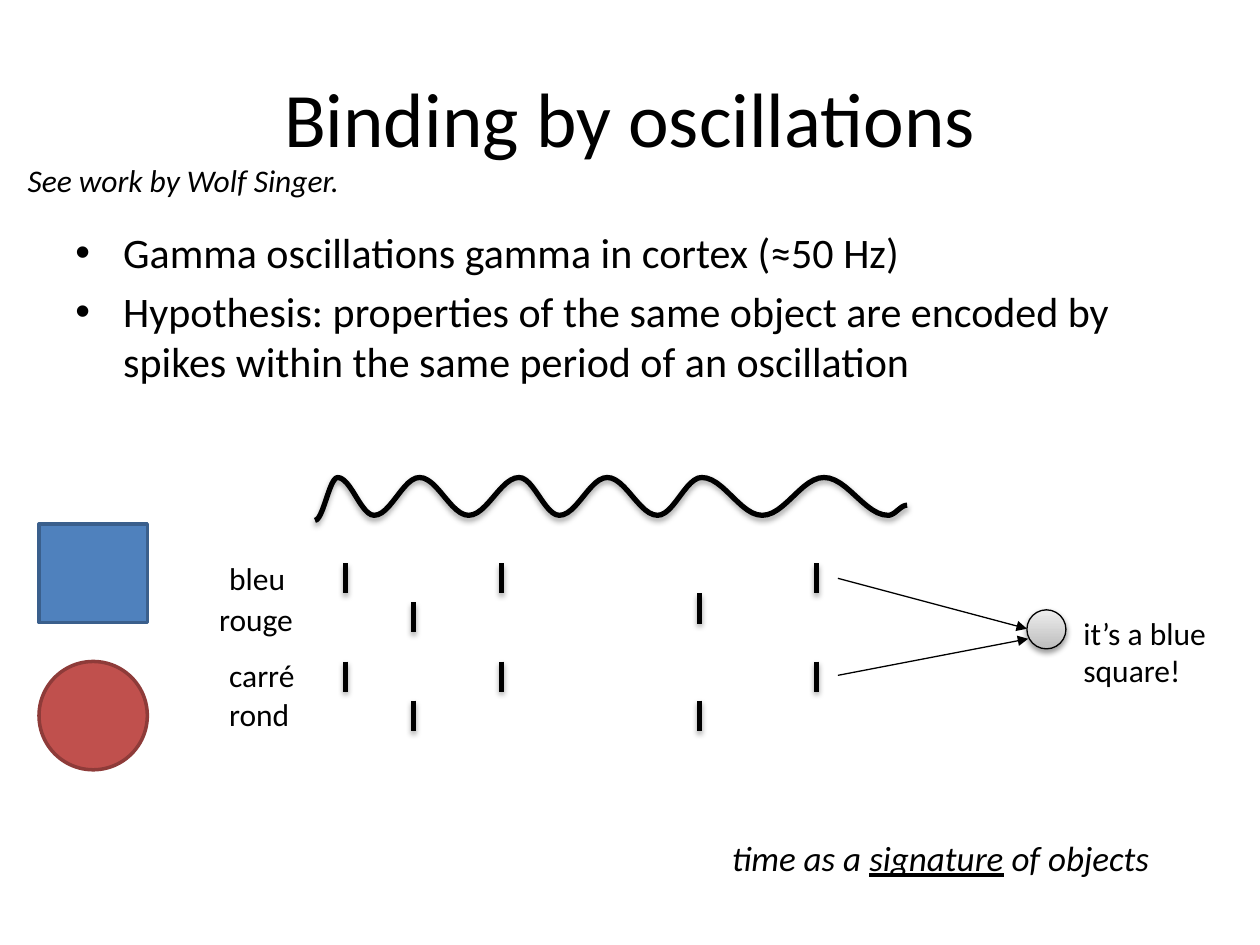
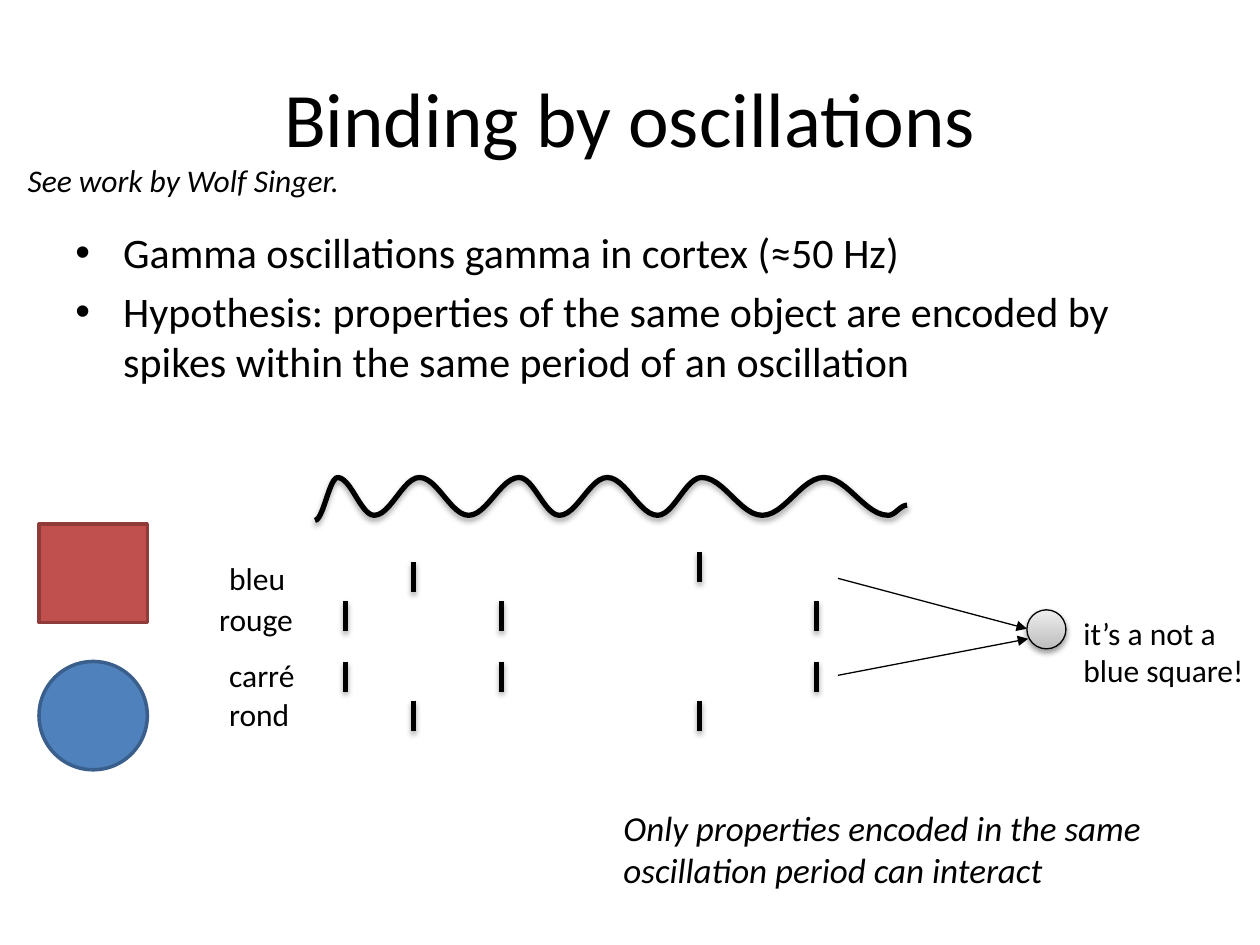
from itertools import pairwise
from math import cos, pi
from lxml.etree import SubElement
from pptx import Presentation
from pptx.dml.color import RGBColor
from pptx.enum.shapes import MSO_CONNECTOR, MSO_SHAPE
from pptx.enum.text import MSO_ANCHOR, PP_ALIGN
from pptx.oxml.ns import qn
from pptx.util import Inches, Pt

BLACK = RGBColor(0, 0, 0)
BLUE = RGBColor(0x4F, 0x81, 0xBD)
NAVY = RGBColor(0x3A, 0x5F, 0x8C)
RED = RGBColor(0xC0, 0x50, 0x4D)
MAROON = RGBColor(0x8E, 0x3B, 0x39)
GREY = RGBColor(0xBD, 0xBD, 0xBD)
PALE = RGBColor(0xEE, 0xEE, 0xEE)
EDGE = {BLUE: NAVY, RED: MAROON}
FONT = "Calibri"

TITLE = "Binding by oscillations"
CREDIT = "See work by Wolf Singer."
POINTS = [
    "Gamma oscillations gamma in cortex (≈50 Hz)",
    "Hypothesis: properties of the same object are encoded by "
    "spikes within the same period of an oscillation",
]
LABELS = [
    ("carré", 1.72, 5.16, 0.78),
    ("rond", 1.72, 5.47, 0.71),
    ("rouge", 1.64, 4.71, 0.85),
    ("bleu", 1.72, 4.39, 0.68),
]

FIRST = [2.74, 3.98, 6.48]
SECOND = [3.28, 5.55]
EARLY, LATE = SECOND
SLIDES = [
    {
        "square": BLUE,
        "disc": RED,
        "spikes": [
            (FIRST, 4.47),
            ([EARLY], 4.78),
            ([LATE], 4.71),
            (FIRST, 5.25),
            (SECOND, 5.56),
        ],
        "verdict": "it’s a blue square!",
        "moral": [
            ("time as a ", False),
            ("signature", True),
            (" of objects", False),
        ],
        "place": (5.71, 6.59, 3.54, 0.44),
        "wrap": False,
    },
    {
        "square": RED,
        "disc": BLUE,
        "spikes": [
            ([EARLY], 4.46),
            ([LATE], 4.38),
            (FIRST, 4.77),
            (FIRST, 5.25),
            (SECOND, 5.56),
        ],
        "verdict": "it’s a not a blue square!",
        "moral": [
            ("Only properties encoded in the same "
             "oscillation period can interact", False),
        ],
        "place": (4.85, 6.35, 4.84, 0.77),
        "wrap": True,
    },
]

HEAD = (0.5, 0.3, 9, 1.25)
BODY = (0.5, 1.75, 9, 4.95)
SOURCE = (0.12, 1.23, 2.78, 0.4)
SQUARE = (0.31, 4.16, 0.86, 0.78)
DISC = (0.31, 5.25, 0.86, 0.86)
CELL = (8.15, 4.84, 0.31, 0.31)
ANSWER = (8.5, 4.82, 1.55, 0.71)
RAYS = [(6.65, 4.59, 8.15, 4.99), (6.65, 5.36, 8.16, 5.07)]
ROW = 0.4
SPIKE = 0.24
HANG = 0.38

START, END = (2.5, 4.13), (7.2, 4.01)
CREST, DIP = 3.79, 4.09
TURNS = [2.68, 2.97, 3.33, 3.72, 4.12, 4.44, 4.82, 5.22, 5.57, 6.05, 6.54, 7.05]
STEPS = 12

SMALL, MEDIUM, LARGE, HUGE = 18, 20, 24, 44
THIN, MID, THICK = 0.75, 2, 3
SOFT, DEEP = 35, 38


def span(vals):
    return [Inches(val) for val in vals]


def trace():
    bends = [(x, DIP if num % 2 else CREST) for num, x in enumerate(TURNS)]
    dots = [START]
    for (left, high), (right, low) in pairwise([START, *bends, END]):
        for step in range(1, STEPS + 1):
            part = step / STEPS
            ease = (1 - cos(pi * part)) / 2
            dots.append((left + (right - left) * part,
                         high + (low - high) * ease))
    return dots


def write(para, text, size, slant=False, under=False):
    run = para.add_run()
    run.text = text
    font = run.font
    font.name, font.size = FONT, Pt(size)
    font.color.rgb = BLACK
    if slant:
        font.italic = True
    if under:
        font.underline = True


def add_box(slide, place, wrap=False):
    frame = slide.shapes.add_textbox(*span(place)).text_frame
    frame.word_wrap = wrap
    return frame


def add_note(slide, text, place, wrap=False, slant=False):
    write(add_box(slide, place, wrap).paragraphs[0], text, SMALL, slant)


def ink(shape, color, width):
    shape.line.color.rgb = color
    shape.line.width = Pt(width)


def shade(shape, alpha=None):
    fx = SubElement(shape.element.spPr, qn("a:effectLst"))
    if alpha:
        cast = SubElement(fx, qn("a:outerShdw"), blurRad="40000", dist="23000",
                          dir="5400000", rotWithShape="0")
        tone = SubElement(cast, qn("a:srgbClr"), val=str(BLACK))
        SubElement(tone, qn("a:alpha"), val=str(alpha * 1000))


def add_line(slide, ends, width, alpha=None):
    line = slide.shapes.add_connector(MSO_CONNECTOR.STRAIGHT, *span(ends))
    ink(line, BLACK, width)
    shade(line, alpha)
    return line


def add_form(slide, kind, place, color):
    form = slide.shapes.add_shape(kind, *span(place))
    form.shadow.inherit = False
    form.fill.solid()
    form.fill.fore_color.rgb = color
    ink(form, EDGE[color], MID)


def add_title(slide):
    head = slide.shapes.title
    head.left, head.top, head.width, head.height = span(HEAD)
    head.text_frame.vertical_anchor = MSO_ANCHOR.MIDDLE
    para = head.text_frame.paragraphs[0]
    para.alignment = PP_ALIGN.CENTER
    write(para, TITLE, HUGE)


def add_points(slide):
    frame = add_box(slide, BODY, True)
    for num, text in enumerate(POINTS):
        para = frame.add_paragraph() if num else frame.paragraphs[0]
        para.space_before = Pt(LARGE * 0.2)
        props = para._p.get_or_add_pPr()
        props.set("marL", str(Inches(HANG)))
        props.set("indent", str(-Inches(HANG)))
        SubElement(props, qn("a:buFont"), typeface="Arial")
        SubElement(props, qn("a:buChar"), char="•")
        write(para, text, LARGE)


def add_wave(slide):
    first, *rest = [span(dot) for dot in trace()]
    curve = slide.shapes.build_freeform(*first)
    curve.add_line_segments(rest, close=False)
    wave = curve.convert_to_shape()
    wave.fill.background()
    ink(wave, BLACK, THICK)
    shade(wave, SOFT)


def add_spikes(slide, rows):
    for times, top in rows:
        for time in times:
            add_line(slide, (time, top, time, top + SPIKE), THICK, SOFT)


def add_cell(slide):
    cell = slide.shapes.add_shape(MSO_SHAPE.OVAL, *span(CELL))
    cell.fill.gradient()
    cell.fill.gradient_angle = 90
    for stop, color, pos in zip(cell.fill.gradient_stops, (GREY, PALE), (0, 1)):
        stop.color.rgb = color
        stop.position = pos
    ink(cell, BLACK, THIN)
    shade(cell, DEEP)
    for ends in RAYS:
        ray = add_line(slide, ends, THIN)
        SubElement(ray.element.spPr.find(qn("a:ln")), qn("a:tailEnd"),
                   type="triangle")


def add_moral(slide, data):
    para = add_box(slide, data["place"], data["wrap"]).paragraphs[0]
    for text, under in data["moral"]:
        write(para, text, MEDIUM, True, under)


def add_page(deck, data):
    slide = deck.slides.add_slide(deck.slide_layouts[5])
    add_title(slide)
    add_points(slide)
    add_wave(slide)
    add_form(slide, MSO_SHAPE.RECTANGLE, SQUARE, data["square"])
    add_form(slide, MSO_SHAPE.OVAL, DISC, data["disc"])
    for text, left, top, width in LABELS:
        add_note(slide, text, (left, top, width, ROW))
    add_spikes(slide, data["spikes"])
    add_note(slide, CREDIT, SOURCE, slant=True)
    add_moral(slide, data)
    add_cell(slide)
    add_note(slide, data["verdict"], ANSWER, wrap=True)


def main():
    deck = Presentation()
    deck.slide_width, deck.slide_height = span((10, 7.5))
    for data in SLIDES:
        add_page(deck, data)
    deck.save("out.pptx")


if __name__ == "__main__":
    main()
